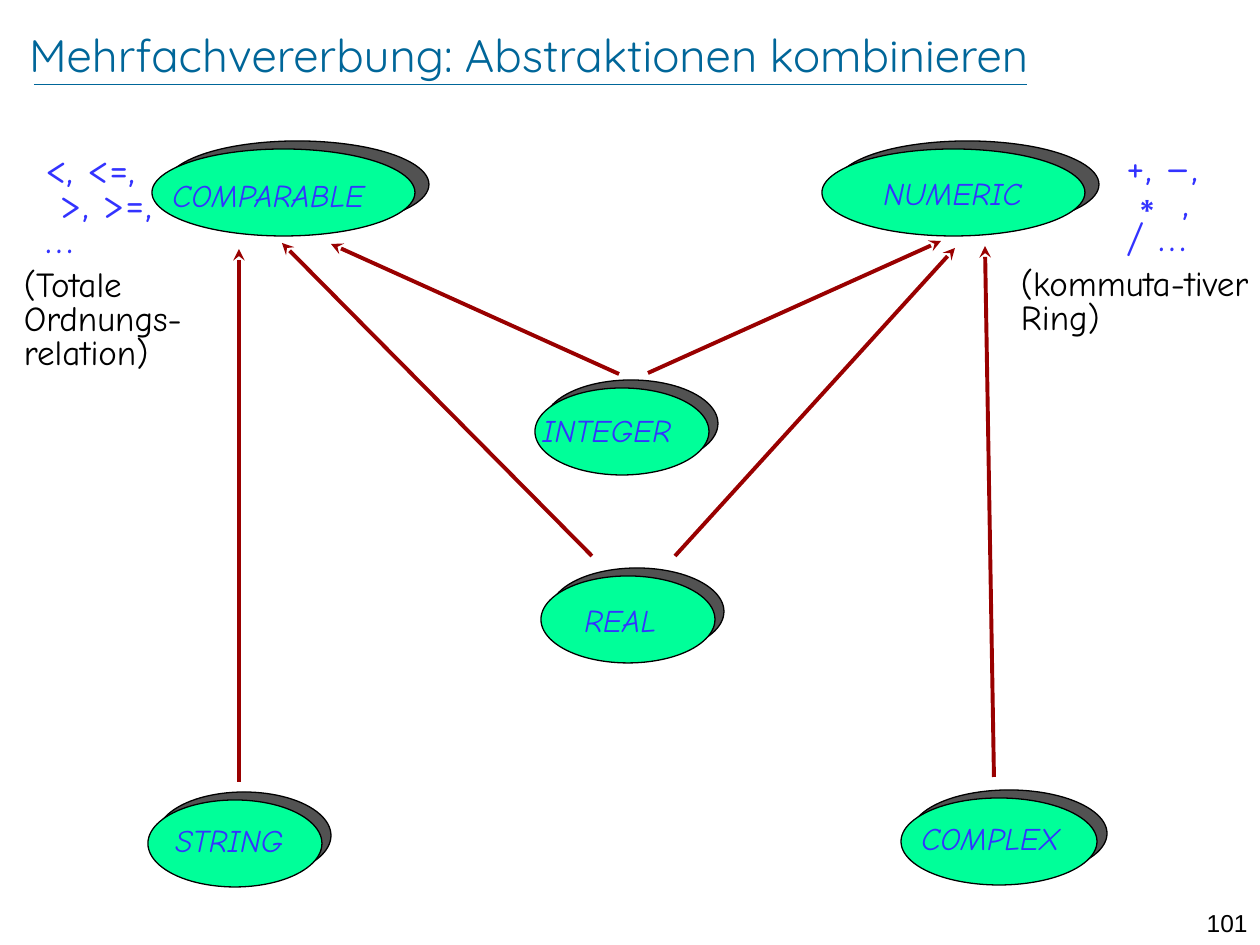
from dataclasses import dataclass

from lxml import etree
from pptx import Presentation
from pptx import util as u
from pptx.dml.color import RGBColor
from pptx.enum import shapes, text
from pptx.oxml.ns import qn

EMU_PER_INCH = 914400
PX_PER_INCH = 126
HAND_FONT = "Comic Neue"
BLUE, BLACK, GREEN, RED, TEAL = "3333FF", "000000", "00FF99", "990000", "006699"


@dataclass(frozen=True)
class TypeBubble:
    name: str
    left: int
    top: int
    width: int
    label_left: int
    label_top: int
    label_width: int


@dataclass(frozen=True)
class Arrow:
    start: tuple[int, int]
    end: tuple[int, int]


@dataclass(frozen=True)
class Note:
    runs: tuple[str, ...]
    box: tuple[int, int, int, int]
    size: int
    line_spacing: float
    inset: int
    color: str


BUBBLE_HEIGHT = 87
SHADOW_RISE = 8
BUBBLES = [
    TypeBubble("COMPARABLE", 152, 149, 263, 160, 170, 258),
    TypeBubble("REAL", 541, 576, 174, 572, 595, 120),
    TypeBubble("INTEGER", 535, 388, 174, 530, 405, 188),
    TypeBubble("COMPLEX", 901, 798, 196, 909, 813, 188),
    TypeBubble("NUMERIC", 822, 149, 263, 871, 168, 198),
    TypeBubble("STRING", 148, 800, 174, 163, 815, 192),
]
ARROWS = [
    Arrow((619, 374), (331, 244)),
    Arrow((648, 373), (941, 241)),
    Arrow((675, 556), (955, 248)),
    Arrow((592, 556), (282, 243)),
    Arrow((239, 782), (239, 249)),
    Arrow((994, 777), (985, 246)),
]
NOTES = [
    Note(("<, <=,\v >, >=, …",), (33, 149, 164, 118), 24, 0.7, 13, BLUE),
    Note(("+, –, ", "∗", " , / …"), (1114, 147, 120, 118), 24, 0.7, 13, BLUE),
    Note(("(Totale Ordnungs-relation)",), (24, 271, 239, 102), 20, 0.8, 0, BLACK),
    Note(("(kommuta-tiver Ring)",), (1021, 270, 239, 68), 20, 0.8, 0, BLACK),
]


def px(length: int) -> u.Emu:
    return u.Emu(round(length * EMU_PER_INCH / PX_PER_INCH))


def rgb(color: str) -> RGBColor:
    return RGBColor.from_string(color)


def style_font(font, name: str, size: int, color: str, italic: bool = False) -> None:
    font.name = name
    font.size = u.Pt(size)
    font.color.rgb = rgb(color)
    font.italic = italic


def add_text_box(slide, box: tuple[int, int, int, int]):
    text_frame = slide.shapes.add_textbox(*map(px, box)).text_frame
    text_frame.word_wrap = True
    return text_frame


def add_ellipse(group, left: int, top: int, width: int, color: str):
    ellipse = group.shapes.add_shape(
        shapes.MSO_SHAPE.OVAL, px(left), px(top), px(width), px(BUBBLE_HEIGHT))
    ellipse.shadow.inherit = False
    ellipse.fill.solid()
    ellipse.fill.fore_color.rgb = rgb(color)
    ellipse.line.color.rgb = rgb(BLACK)
    ellipse.line.width = u.Pt(0.75)
    return ellipse


def add_bubble(slide, bubble: TypeBubble) -> None:
    """Draw a green ellipse over its translucent black drop shadow."""
    group = slide.shapes.add_group_shape()
    shadow = add_ellipse(group, bubble.left + round(bubble.width / 19),
                         bubble.top - SHADOW_RISE, bubble.width, BLACK)
    shadow_color = shadow.fill._xPr.find(qn("a:solidFill"))[0]
    etree.SubElement(shadow_color, qn("a:alpha"), val="68000")
    add_ellipse(group, bubble.left, bubble.top, bubble.width, GREEN)


def add_label(slide, bubble: TypeBubble) -> None:
    text_frame = add_text_box(
        slide, (bubble.label_left, bubble.label_top, bubble.label_width, 50))
    text_frame.text = bubble.name
    style_font(text_frame.paragraphs[0].runs[0].font, HAND_FONT, 18, BLUE, italic=True)


def add_line(slide, start: tuple[int, int], end: tuple[int, int],
             color: str, width: float):
    line = slide.shapes.add_connector(
        shapes.MSO_CONNECTOR.STRAIGHT, *map(px, start + end))
    line.line.color.rgb = rgb(color)
    line.line.width = u.Pt(width)
    etree.SubElement(line._element.spPr, qn("a:effectLst"))
    return line


def add_arrow(slide, arrow: Arrow) -> None:
    connector = add_line(slide, arrow.start, arrow.end, RED, 2.25)
    etree.SubElement(connector.line._get_or_add_ln(), qn("a:tailEnd"), type="stealth")


def add_note(slide, note: Note) -> None:
    text_frame = add_text_box(slide, note.box)
    if note.inset == 0:
        text_frame.margin_left = text_frame.margin_right = 0
        text_frame.margin_top = text_frame.margin_bottom = 0
    paragraph = text_frame.paragraphs[0]
    paragraph.text = note.runs[0]
    for content in note.runs[1:]:
        paragraph.add_run().text = content
    paragraph.line_spacing = note.line_spacing
    for run in paragraph.runs:
        font_name = "Arial" if run.text == "∗" else HAND_FONT
        style_font(run.font, font_name, note.size, note.color)


def set_title(slide, content: str) -> None:
    title = slide.shapes.title
    title.left, title.top, title.width, title.height = map(px, (29, 20, 1173, 69))
    text_frame = title.text_frame
    text_frame.text = content
    text_frame.margin_left = text_frame.margin_right = 0
    text_frame.margin_top = text_frame.margin_bottom = 0
    text_frame.vertical_anchor = text.MSO_ANCHOR.MIDDLE
    paragraph = text_frame.paragraphs[0]
    paragraph.alignment = text.PP_ALIGN.LEFT
    style_font(paragraph.runs[0].font, "Quicksand", 26, TEAL)


def add_page_number(slide, number: str) -> None:
    text_frame = add_text_box(slide, (1191, 902, 69, 30))
    text_frame.text = number
    paragraph = text_frame.paragraphs[0]
    paragraph.alignment = text.PP_ALIGN.RIGHT
    style_font(paragraph.runs[0].font, "Arial", 14, BLACK)


def main() -> None:
    presentation = Presentation()
    presentation.slide_width, presentation.slide_height = px(1260), px(945)
    slide = presentation.slides.add_slide(presentation.slide_layouts[5])
    set_title(slide, "Mehrfachvererbung: Abstraktionen kombinieren")
    add_line(slide, (34, 84), (1027, 84), TEAL, 0.25)
    add_page_number(slide, "101")
    for bubble in BUBBLES:
        add_bubble(slide, bubble)
    for bubble in BUBBLES:
        add_label(slide, bubble)
    for arrow in ARROWS:
        add_arrow(slide, arrow)
    for note in NOTES:
        add_note(slide, note)
    presentation.save("out.pptx")


if __name__ == "__main__":
    main()
